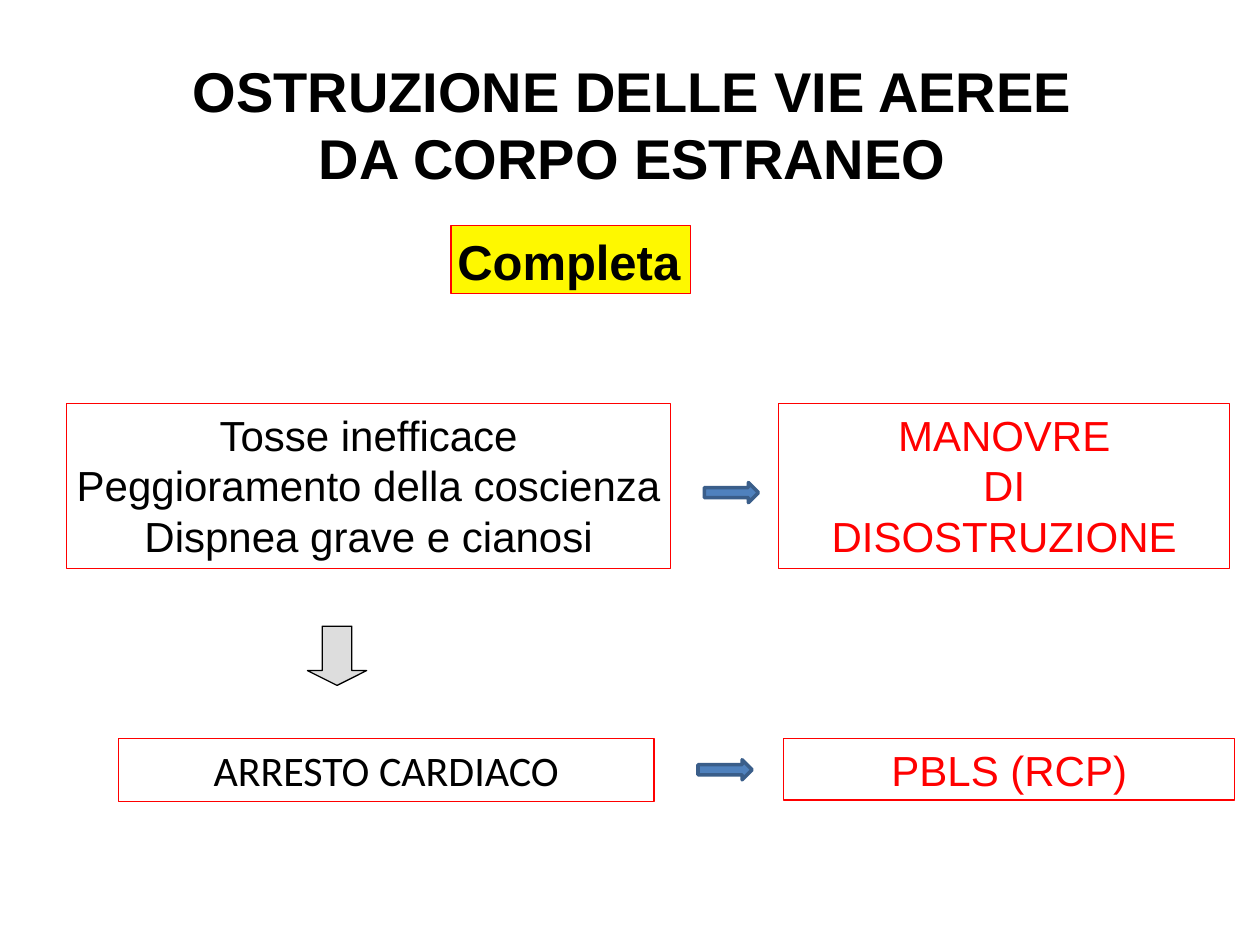
from pptx import Presentation
from pptx.dml.color import RGBColor
from pptx.enum.shapes import MSO_SHAPE as SHAPE
from pptx.enum.text import MSO_ANCHOR as ANCHOR, PP_ALIGN as ALIGN
from pptx.util import Inches, Pt


def rgb(value):
    return RGBColor.from_string(value)


class Deck:
    """Builds one slide of boxed statements joined by block arrows."""

    BLACK, RED, YELLOW = "000000", "FF0000", "FEF800"
    BLUE, NAVY, GREY = "4F81BD", "3A5E8A", "DDDDDD"

    def __init__(self, prs):
        self.s = prs.slides.add_slide(prs.slide_layouts[6])

    def shape(self, kind, at, fill, line, width):
        sp = self.s.shapes.add_shape(kind, *map(Inches, at))
        sp.shadow.inherit = False
        if fill:
            sp.fill.solid()
            sp.fill.fore_color.rgb = rgb(fill)
        else:
            sp.fill.background()
        sp.line.color.rgb = rgb(line)
        sp.line.width = Pt(width)
        return sp

    def text(self, sp, lines, size=24, color=BLACK, font="Arial", bold=False,
             align=ALIGN.CENTER, anchor=ANCHOR.TOP, wrap=True):
        tf = sp.text_frame
        tf.word_wrap = wrap
        tf.vertical_anchor = anchor
        tf.margin_left = tf.margin_right = Inches(0.05)
        tf.margin_top = tf.margin_bottom = Inches(0.05)
        for i, line in enumerate(lines):
            p = tf.add_paragraph() if i else tf.paragraphs[0]
            p.alignment = align
            r = p.add_run()
            r.text = line
            r.font.name = font
            r.font.size = Pt(size)
            r.font.bold = bold
            r.font.color.rgb = rgb(color)

    def title(self, at, line):
        sp = self.s.shapes.add_textbox(*map(Inches, at))
        self.text(sp, [line], size=32, bold=True, anchor=ANCHOR.MIDDLE)

    def box(self, at, lines, fill=None, **style):
        sp = self.shape(SHAPE.RECTANGLE, at, fill, self.RED, 0.75)
        self.text(sp, lines, **style)

    def right_arrow(self, left, top):
        self.shape(SHAPE.RIGHT_ARROW, (left, top, 0.43, 0.16), self.BLUE, self.NAVY, 2)

    def down_arrow(self, left, top):
        sp = self.shape(SHAPE.DOWN_ARROW, (left, top, 0.47, 0.47), self.GREY, self.BLACK, 0.75)
        sp.adjustments[0] = 0.5
        sp.adjustments[1] = 0.25


def main():
    prs = Presentation()
    prs.slide_width, prs.slide_height = Inches(10), Inches(7.5)
    deck = Deck(prs)
    deck.title((1.24, -0.15, 7.56, 2.26), "OSTRUZIONE DELLE VIE AEREE DA CORPO ESTRANEO")
    deck.box((3.58, 1.79, 1.9, 0.54), ["Completa"], fill=deck.YELLOW,
             size=28, bold=True, align=ALIGN.LEFT, wrap=False)

    deck.box((0.53, 3.2, 4.79, 1.31),
             ["Tosse inefficace", "Peggioramento della coscienza", "Dispnea grave e cianosi"],
             wrap=False)
    deck.right_arrow(5.59, 3.83)
    deck.box((6.18, 3.2, 3.58, 1.31), ["MANOVRE", "DI", "DISOSTRUZIONE"], color=deck.RED)

    deck.down_arrow(2.44, 4.97)
    deck.box((0.94, 5.86, 4.25, 0.5), ["ARRESTO CARDIACO"], font="Calibri")
    deck.right_arrow(5.54, 6.03)
    deck.box((6.22, 5.86, 3.58, 0.49), ["PBLS (RCP)"], color=deck.RED)
    prs.save("out.pptx")


if __name__ == "__main__":
    main()
